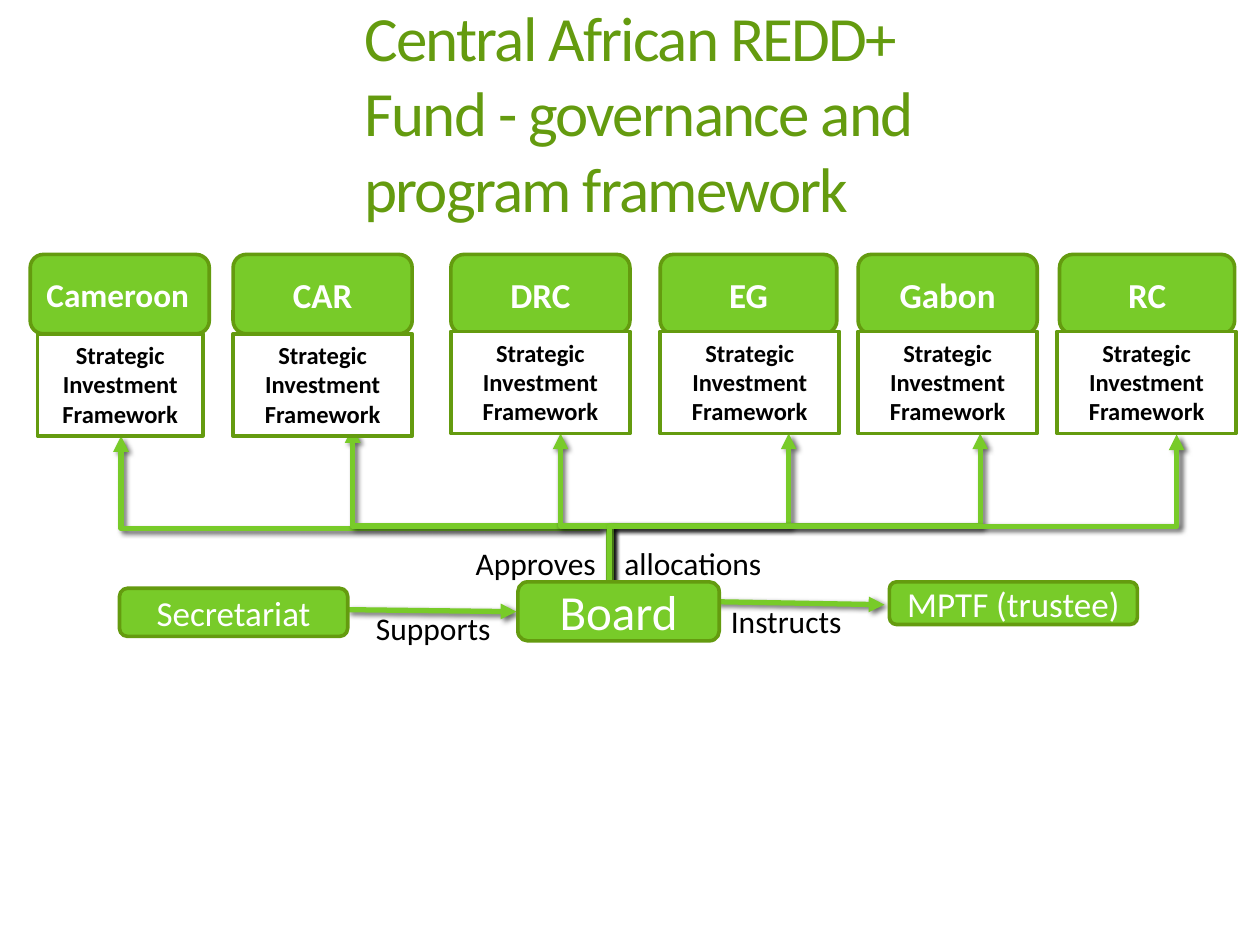
from collections import namedtuple
from copy import deepcopy
from dataclasses import dataclass

from lxml import etree
from pptx import Presentation
from pptx.dml.color import RGBColor
from pptx.enum.shapes import MSO_CONNECTOR, MSO_SHAPE
from pptx.enum.text import MSO_ANCHOR, MSO_AUTO_SIZE, PP_ALIGN
from pptx.oxml import parse_xml
from pptx.oxml.ns import nsdecls, qn
from pptx.util import Cm, Pt


@dataclass(frozen=True)
class Theme:
    font: str = "Calibri"
    green: RGBColor = RGBColor(0x78, 0xCB, 0x29)
    dark_green: RGBColor = RGBColor(0x64, 0x9B, 0x0F)
    white: RGBColor = RGBColor(255, 255, 255)
    black: RGBColor = RGBColor(0, 0, 0)
    title: int = 36
    board: int = 28
    heading: int = 20
    tight_heading: int = 19
    label: int = 18
    framework: int = 14
    outline: float = 2.08
    arrow: int = 3


THEME = Theme()
Box = namedtuple("Box", "left top width height")  # centimetres
Country = namedtuple("Country", "name left width frame_left frame_top frame_width")

HEADER_TOP, HEADER_HEIGHT, FRAME_HEIGHT = 5.13, 1.6, 2.06
COUNTRIES = [
    Country("Cameroon", 0.61, 3.61, 0.76, 6.73, 3.33),
    Country("CAR", 4.7, 3.61, 4.7, 6.73, 3.61),
    Country("DRC", 9.09, 3.61, 9.09, 6.68, 3.61),
    Country("EG", 13.31, 3.56, 13.31, 6.68, 3.61),
    Country("Gabon", 17.3, 3.61, 17.3, 6.68, 3.61),
    Country("RC", 21.36, 3.53, 21.31, 6.68, 3.61),
]
# start, tip and bend position of each arrow leaving the board
BOARD_ARROWS = [
    ((12.27, 12.32), (7.11, 8.61), 0.463),
    ((12.29, 12.47), (15.9, 8.74), 0.5),
    ((12.29, 12.47), (11.3, 8.74), 0.5),
    ((12.32, 12.47), (19.76, 8.74), 0.5),
    ((12.29, 12.47), (23.72, 8.76), 0.5),
]


def write(shape, text, size, color, bold=False, anchor=MSO_ANCHOR.MIDDLE,
          alignment=PP_ALIGN.CENTER, space_after=0):
    frame = shape.text_frame
    frame.text = text
    frame.word_wrap = True
    frame.auto_size = MSO_AUTO_SIZE.NONE
    frame.vertical_anchor = anchor
    paragraph = frame.paragraphs[0]
    paragraph.alignment = alignment
    paragraph.space_after = Pt(space_after)
    formats = {"name": THEME.font, "size": Pt(size), "bold": bold}
    for run in paragraph.runs:
        for name, value in formats.items():
            setattr(run.font, name, value)
        run.font.color.rgb = color
    return paragraph


def set_spacing(run, points):
    run.font._element.set("spc", str(round(points * 100)))


def add_panel(slide, box, kind, fill):
    shape = slide.shapes.add_shape(kind, *map(Cm, box))
    shape.shadow.inherit = False
    shape.fill.solid()
    shape.fill.fore_color.rgb = fill
    shape.line.color.rgb = THEME.dark_green
    shape.line.width = Pt(THEME.outline)
    return shape


def add_label(slide, box, text):
    shape = slide.shapes.add_textbox(*map(Cm, box))
    return write(shape, text, THEME.label, THEME.black)


def style_arrow(connector):
    connector.line.color.rgb = THEME.green
    connector.line.width = Pt(THEME.arrow)
    line = connector.line._get_or_add_ln()
    etree.SubElement(line, qn("a:tailEnd"), type="triangle")
    line.addnext(parse_xml(
        f'<a:effectLst {nsdecls("a")}>'
        '<a:outerShdw blurRad="38100" dist="25400" dir="2700000" rotWithShape="0">'
        '<a:srgbClr val="000000"><a:alpha val="60000"/></a:srgbClr>'
        '</a:outerShdw></a:effectLst>'))


def add_arrow(slide, start, end, kind=MSO_CONNECTOR.STRAIGHT):
    connector = slide.shapes.add_connector(kind, *map(Cm, (*start, *end)))
    style_arrow(connector)
    return connector


def add_rising_arrow(slide, start, tip, bend):
    """Elbow that leaves upward, runs sideways and rises to its tip."""
    (x1, y1), (x2, y2) = start, tip
    center_x, center_y = (x1 + x2) / 2, (y1 + y2) / 2
    half_rise, half_run = (y1 - y2) / 2, abs(x2 - x1) / 2
    connector = add_arrow(slide, (center_x - half_rise, center_y - half_run),
                          (center_x + half_rise, center_y + half_run),
                          MSO_CONNECTOR.ELBOW)
    properties = connector._element.spPr
    turn = {"rot": "5400000", "flipH": "1"} if x2 > x1 else {"rot": "16200000"}
    for name, value in {**turn, "flipV": "1"}.items():
        properties.find(qn("a:xfrm")).set(name, value)
    adjustments = properties.find(qn("a:prstGeom")).get_or_add_avLst()
    etree.SubElement(adjustments, qn("a:gd"), name="adj1",
                     fmla=f"val {round(bend * 100000)}")


def add_corner_arrow(slide, start, tip):
    """Elbow that runs left, then rises to its tip."""
    connector = add_arrow(slide, tip, start, MSO_CONNECTOR.ELBOW)
    properties = connector._element.spPr
    properties.find(qn("a:xfrm")).set("rot", "10800000")
    properties.find(qn("a:prstGeom")).set("prst", "bentConnector2")


def add_title(slide, box):
    title = slide.shapes.title
    for name, value in zip(Box._fields, box):
        setattr(title, name, Cm(value))
    paragraph = write(title, "Central African REDD+\vFund - governance and\vprogram framework",
                      THEME.title, THEME.dark_green, alignment=PP_ALIGN.LEFT)
    for run in paragraph.runs:
        set_spacing(run, -1)


def add_country(slide, country):
    # Rounded country heading
    header = add_panel(slide, Box(country.left, HEADER_TOP, country.width, HEADER_HEIGHT),
                       MSO_SHAPE.ROUNDED_RECTANGLE, THEME.green)
    tight = len(country.name) > 5
    write(header, country.name, THEME.tight_heading if tight else THEME.heading,
          THEME.white, bold=True, alignment=PP_ALIGN.LEFT if tight else PP_ALIGN.CENTER)
    # Framework box below it
    frame = add_panel(slide, Box(country.frame_left, country.frame_top,
                                 country.frame_width, FRAME_HEIGHT),
                      MSO_SHAPE.RECTANGLE, THEME.white)
    write(frame, "Strategic Investment Framework", THEME.framework, THEME.black,
          bold=True, anchor=MSO_ANCHOR.TOP, space_after=6)


def add_allocations(slide, box):
    """Arrows from the board to the countries, with their label."""
    add_corner_arrow(slide, (12.1, 10.65), (2.44, 8.79))
    for start, tip, bend in BOARD_ARROWS:
        add_rising_arrow(slide, start, tip, bend)
    # One widely spaced blank lets the vertical line pass between the words
    paragraph = add_label(slide, box, "Approves")
    first = paragraph.runs[0]
    for text in (" ", "allocations"):
        paragraph._p.append(deepcopy(first._r))
        paragraph.runs[-1].text = text
    set_spacing(paragraph.runs[1], 12.2)


def add_governance(slide, box):
    """Secretariat, board and trustee, placed from the corner of the box."""
    left, top = box.left, box.top
    add_arrow(slide, (left + 4.6, top + 0.56), (left + 8, top + 0.6))
    add_arrow(slide, (left + 12.02, top + 0.4), (left + 15.42, top + 0.46))
    add_label(slide, Box(left + 4.42, top + 0.44, 3.81, 0.99), "Supports")
    add_label(slide, Box(left + 11.74, top + 0.36, 3.4, 0.84), "Instructs")
    bodies = [
        ("Secretariat", THEME.heading, 0, 0.13, 4.6, 0.97),
        ("Board", THEME.board, 8.03, 0, 4.06, 1.19),
        ("MPTF (trustee)", THEME.heading, 15.52, 0, 5, 0.86),
    ]
    for name, size, x, y, width, height in bodies:
        body = add_panel(slide, Box(left + x, top + y, width, height),
                         MSO_SHAPE.ROUNDED_RECTANGLE, THEME.green)
        write(body, name, size, THEME.white)


def main():
    presentation = Presentation()
    presentation.slide_width, presentation.slide_height = Cm(25.4), Cm(19.05)
    slide = presentation.slides.add_slide(presentation.slide_layouts[5])
    add_title(slide, Box(7.09, 0.41, 18.29, 3.68))
    add_allocations(slide, Box(8.81, 10.82, 7.32, 1.04))
    for country in COUNTRIES:
        add_country(slide, country)
    add_governance(slide, Box(2.41, 11.73, 20.52, 1.19))
    presentation.save("out.pptx")


if __name__ == "__main__":
    main()
